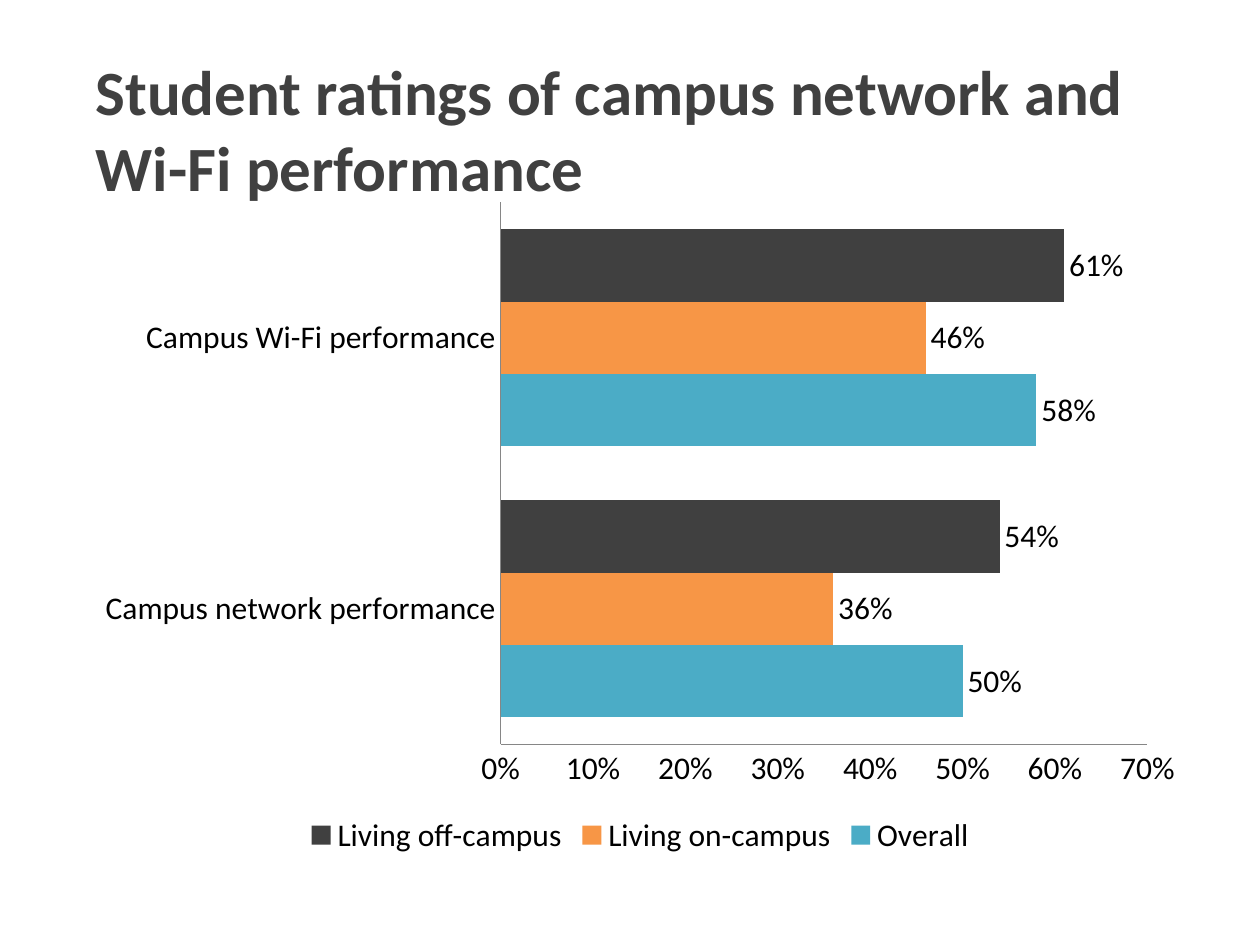
from dataclasses import dataclass

from pptx import Presentation
from pptx import util as u
from pptx.chart.data import CategoryChartData
from pptx.dml.color import RGBColor
from pptx.enum import chart as ch, text


@dataclass(frozen=True)
class Theme:
    font: str = "Calibri"
    title_size: int = 36
    chart_size: int = 18
    dark: str = "404040"
    orange: str = "F79646"
    teal: str = "4BACC6"
    black: str = "000000"
    axis: str = "868686"


THEME = Theme()
PERCENT = "0%"
CATEGORIES = ("Campus network performance", "Campus Wi-Fi performance")
RATINGS = (
    ("Overall", (0.50, 0.58), THEME.teal),
    ("Living on-campus", (0.36, 0.46), THEME.orange),
    ("Living off-campus", (0.54, 0.61), THEME.dark),
)


def apply_format(target, values):
    for name, value in values.items():
        setattr(target, name, value)


def style_font(font, size, color, bold=False):
    apply_format(font, {"name": THEME.font, "size": u.Pt(size), "bold": bold})
    font.color.rgb = RGBColor.from_string(color)


def add_title(page, wording):
    box = page.shapes.add_textbox(u.Cm(1.68), u.Cm(0.94), u.Cm(22.28), u.Cm(2.03))
    apply_format(box.text_frame, {
        "word_wrap": True,
        "auto_size": text.MSO_AUTO_SIZE.NONE,
        "vertical_anchor": text.MSO_ANCHOR.TOP,
    })
    span = box.text_frame.paragraphs[0].add_run()
    span.text = wording
    style_font(span.font, THEME.title_size, THEME.dark, bold=True)


def style_axis(axis):
    apply_format(axis, {
        "has_major_gridlines": False,
        "major_tick_mark": ch.XL_TICK_MARK.NONE,
        "minor_tick_mark": ch.XL_TICK_MARK.NONE,
    })
    axis.format.line.width = u.Pt(0.75)
    axis.format.line.color.rgb = RGBColor.from_string(THEME.axis)


def style_series(series, color):
    series.format.fill.solid()
    series.format.fill.fore_color.rgb = RGBColor.from_string(color)
    series.invert_if_negative = False
    apply_format(series.data_labels, {
        "show_value": True,
        "number_format": PERCENT,
        "number_format_is_linked": False,
        "position": ch.XL_LABEL_POSITION.OUTSIDE_END,
    })


def add_rating_chart(page):
    data = CategoryChartData(number_format=PERCENT)
    data.categories = CATEGORIES
    for name, values, _ in RATINGS:
        data.add_series(name, values)
    chart = page.shapes.add_chart(
        ch.XL_CHART_TYPE.BAR_CLUSTERED,
        u.Cm(1.68), u.Cm(3.81), u.Cm(22.45), u.Cm(13.54), data,
    ).chart
    style_font(chart.font, THEME.chart_size, THEME.black)
    apply_format(chart, {"has_title": False, "has_legend": True})
    apply_format(chart.legend, {
        "position": ch.XL_LEGEND_POSITION.BOTTOM,
        "include_in_layout": False,
    })

    style_axis(chart.category_axis)
    style_axis(chart.value_axis)
    apply_format(chart.value_axis.tick_labels, {
        "number_format": PERCENT,
        "number_format_is_linked": False,
    })

    plot = chart.plots[0]
    apply_format(plot, {"gap_width": 75, "overlap": 0, "vary_by_categories": False})
    for series, (_, _, color) in zip(plot.series, RATINGS):
        style_series(series, color)


def main():
    deck = Presentation()
    apply_format(deck, {"slide_width": u.Cm(25.4), "slide_height": u.Cm(19.05)})
    page = deck.slides.add_slide(deck.slide_layouts[6])
    add_title(page, "Student ratings of campus network and Wi-Fi performance")
    add_rating_chart(page)
    deck.save("out.pptx")


if __name__ == "__main__":
    main()
